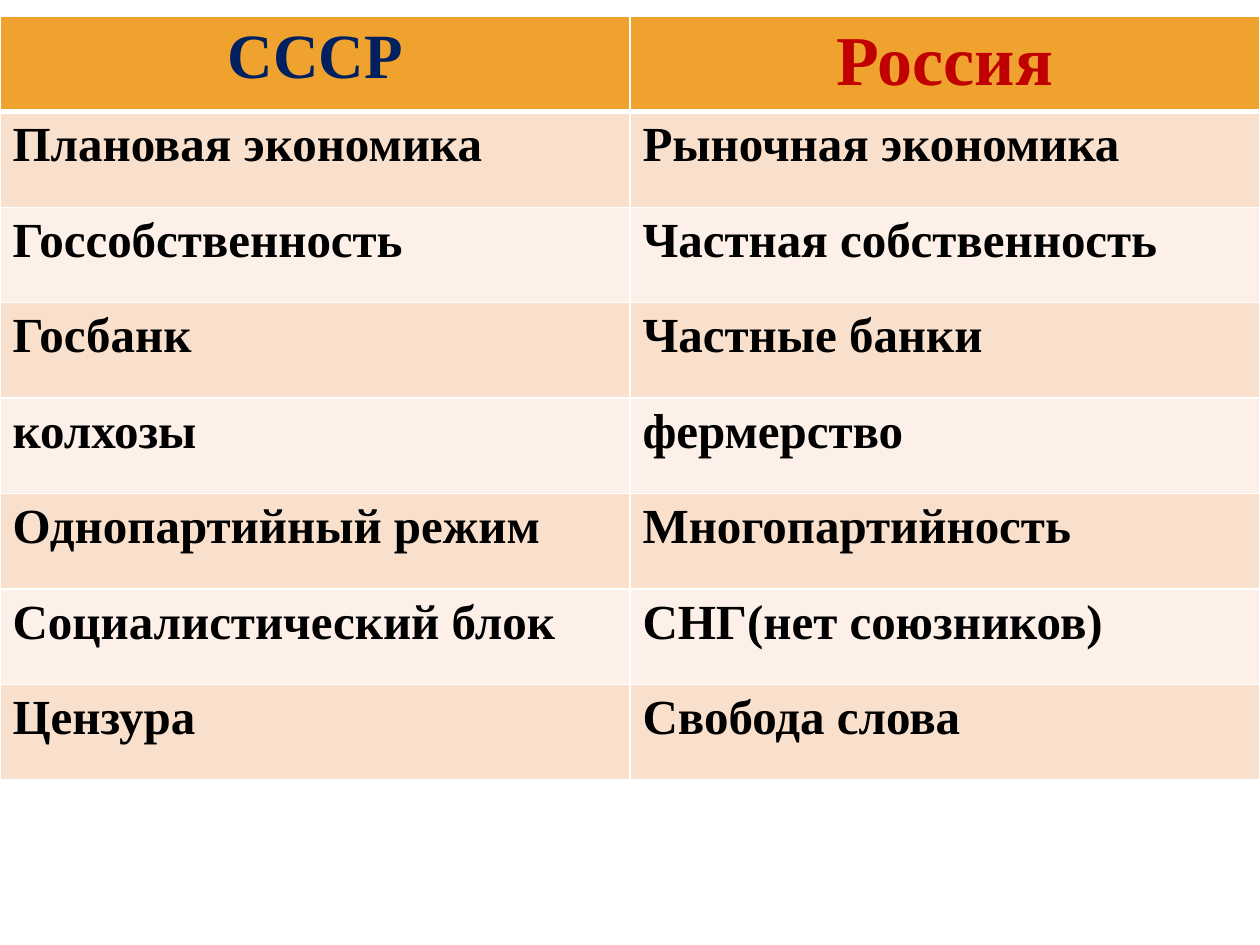
import pptx
import pptx.util
import pptx.dml.color
import pptx.enum.text
import pptx.oxml.ns
import lxml.etree

Inches, Pt = pptx.util.Inches, pptx.util.Pt
RGBColor = pptx.dml.color.RGBColor
ALIGN = pptx.enum.text.PP_ALIGN

WHITE = RGBColor(0xFF, 0xFF, 0xFF)
BLACK = RGBColor(0x00, 0x00, 0x00)
NAVY = RGBColor(0x00, 0x20, 0x60)
RED = RGBColor(0xC0, 0x00, 0x00)
AMBER = RGBColor(0xF0, 0xA2, 0x2E)
PEACH = RGBColor(0xF9, 0xE0, 0xCD)
CREAM = RGBColor(0xFC, 0xF0, 0xE8)

FONT = {"name": "Times New Roman", "bold": True}
HEADS = [{"size": Pt(36), "color": NAVY}, {"size": Pt(40), "color": RED}]
BODY = {"size": Pt(28), "color": BLACK}

ROWS = [
    ("СССР", "Россия"),
    ("Плановая экономика", "Рыночная экономика"),
    ("Госсобственность", "Частная собственность"),
    ("Госбанк", "Частные банки"),
    ("колхозы", "фермерство"),
    ("Однопартийный режим", "Многопартийность"),
    ("Социалистический блок", "СНГ(нет союзников)"),
    ("Цензура", "Свобода слова"),
]


def edge(cell, sides):
    """Draw white borders; sides maps L, R, T, B, in that order, to points."""
    qn = pptx.oxml.ns.qn
    props = cell._tc.get_or_add_tcPr()
    for spot, (side, width) in enumerate(sides.items()):
        line = lxml.etree.Element(qn("a:ln" + side), w=str(Pt(width)))
        fill = lxml.etree.SubElement(line, qn("a:solidFill"))
        lxml.etree.SubElement(fill, qn("a:srgbClr"), val=str(WHITE))
        props.insert(spot, line)


def write(cell, text, style, align):
    para = cell.text_frame.paragraphs[0]
    para.alignment = align
    run = para.add_run()
    run.text = text
    for key, value in {**FONT, **style}.items():
        if key == "color":
            run.font.color.rgb = value
        else:
            setattr(run.font, key, value)


def compare(slide, left, top, width, height):
    """Place the two-column comparison table in the given box."""
    table = slide.shapes.add_table(
        len(ROWS), len(HEADS), left, top, width, height).table
    for row, texts in enumerate(ROWS):
        head = row == 0
        shade = AMBER if head else (CREAM, PEACH)[row % 2]
        sides = {"L": 1, "R": 1, "T": 3 if row == 1 else 1, "B": 3 if head else 1}
        for col, text in enumerate(texts):
            cell = table.cell(row, col)
            cell.fill.solid()
            cell.fill.fore_color.rgb = shade
            edge(cell, sides)
            write(cell, text, HEADS[col] if head else BODY,
                  ALIGN.CENTER if head else ALIGN.LEFT)


def main():
    deck = pptx.Presentation()
    deck.slide_width, deck.slide_height = Inches(10), Inches(7.5)
    slide = deck.slides.add_slide(deck.slide_layouts[6])
    slide.background.fill.solid()
    slide.background.fill.fore_color.rgb = WHITE
    compare(slide, 0, Inches(0.13), deck.slide_width, Inches(6.06))
    deck.save("out.pptx")


if __name__ == "__main__":
    main()
